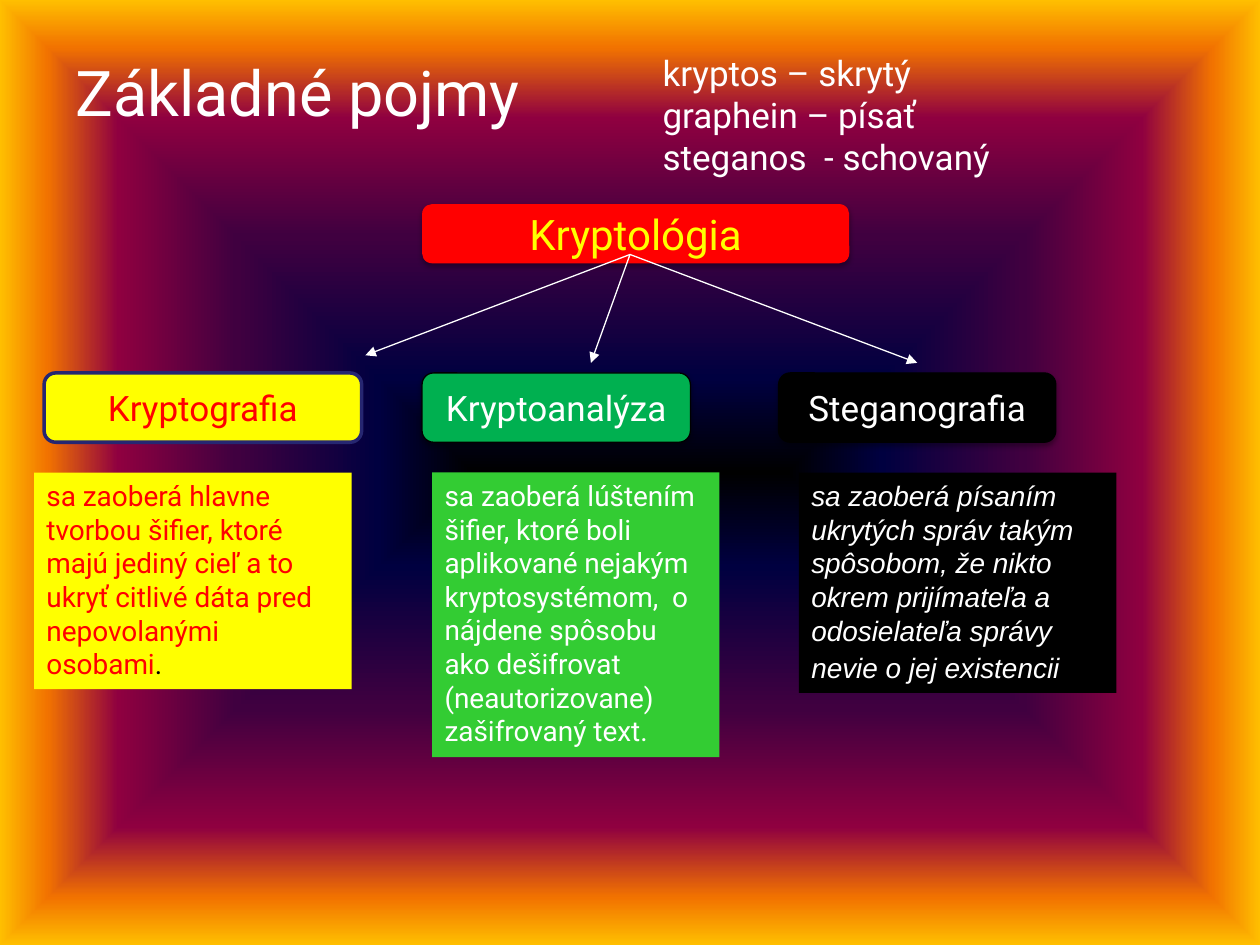
from dataclasses import dataclass

from pptx import Presentation
from pptx.dml.color import RGBColor
from pptx.enum.shapes import MSO_CONNECTOR, MSO_SHAPE
from pptx.enum.text import MSO_ANCHOR, MSO_AUTO_SIZE, PP_ALIGN
from pptx.oxml import parse_xml
from pptx.oxml.ns import nsdecls
from pptx.util import Inches, Pt


@dataclass(frozen=True)
class Theme:
    """Colours, fonts and type sizes of the deck."""
    white: str = "FFFFFF"
    black: str = "000000"
    red: str = "FF0000"
    yellow: str = "FFFF00"
    green: str = "00B050"
    lime: str = "33CC33"
    navy: str = "262671"
    glow: tuple = ((0, "000000"), (20, "000040"), (50, "400040"),
                   (75, "8F0040"), (90, "F27300"), (100, "FFBF00"))
    font: str = "Roboto"
    slant: str = "Arial"
    title: int = 36
    head: int = 24
    label: int = 20
    tail: int = 18
    note: int = 16


class Board:
    """Draws styled parts on one slide with a grid of 100 columns by 75 rows."""

    def __init__(self, deck, theme):
        """Add a title-only slide."""
        self.theme = theme
        self.wide, self.high = deck.slide_width, deck.slide_height
        self.slide = deck.slides.add_slide(deck.slide_layouts[5])

    def grid(self, *cells):
        """Turn column and row pairs into lengths."""
        units = (self.wide / 100, self.high / 75)
        return [round(cell * units[i % 2]) for i, cell in enumerate(cells)]

    def glow(self):
        """Fill the background from the centre outwards."""
        stops = "".join(f'<a:gs pos="{at * 1000}"><a:srgbClr val="{tint}"/></a:gs>'
                        for at, tint in self.theme.glow)
        self.slide.element.cSld.insert(0, parse_xml(
            f'<p:bg {nsdecls("p", "a")}><p:bgPr><a:gradFill rotWithShape="1">'
            f'<a:gsLst>{stops}</a:gsLst><a:path path="shape"><a:fillToRect '
            'l="50000" t="50000" r="50000" b="50000"/></a:path></a:gradFill>'
            '<a:effectLst/></p:bgPr></p:bg>'))

    def run(self, para, text, size, tint, font=None, slant=False):
        """Add one styled run."""
        run = para.add_run()
        run.text = text
        run.font.size = Pt(size)
        run.font.name = font or self.theme.font
        run.font.italic = slant
        run.font.color.rgb = RGBColor.from_string(tint)

    def title(self, place, text):
        """Move and fill the title placeholder."""
        shape = self.slide.shapes.title
        shape.left, shape.top, shape.width, shape.height = self.grid(*place)
        shape.text_frame.vertical_anchor = MSO_ANCHOR.MIDDLE
        para = shape.text_frame.paragraphs[0]
        para.alignment = PP_ALIGN.LEFT
        self.run(para, text, self.theme.title, self.theme.white)

    def lines(self, place, rows):
        """Add a text box with one paragraph for each row."""
        frame = self.slide.shapes.add_textbox(*self.grid(*place)).text_frame
        frame.word_wrap = True
        for i, row in enumerate(rows):
            para = frame.add_paragraph() if i else frame.paragraphs[0]
            self.run(para, row, self.theme.label, self.theme.white)

    def block(self, kind, place, fill):
        """Add a plain filled shape."""
        shape = self.slide.shapes.add_shape(kind, *self.grid(*place))
        shape.shadow.inherit = False
        shape.fill.solid()
        shape.fill.fore_color.rgb = RGBColor.from_string(fill)
        shape.line.fill.background()
        return shape

    def chip(self, place, text, fill, tint, size, edge=None, shade=True):
        """Add a rounded label with an optional edge and shadow."""
        shape = self.block(MSO_SHAPE.ROUNDED_RECTANGLE, place, fill)
        if edge:
            shape.line.color.rgb = RGBColor.from_string(edge[0])
            shape.line.width = Pt(edge[1])
        if shade:
            shape.element.spPr.find(".//{*}effectLst").append(parse_xml(
                f'<a:outerShdw {nsdecls("a")} blurRad="{Pt(3.1)}" dist="{Pt(1.8)}" '
                f'dir="5400000" rotWithShape="0"><a:srgbClr val="{self.theme.black}">'
                '<a:alpha val="35000"/></a:srgbClr></a:outerShdw>'))
        frame = shape.text_frame
        frame.word_wrap = False
        frame.vertical_anchor = MSO_ANCHOR.MIDDLE
        frame.paragraphs[0].alignment = PP_ALIGN.CENTER
        self.run(frame.paragraphs[0], text, size, tint)

    def note(self, place, fill, runs):
        """Add a filled box of running text."""
        frame = self.block(MSO_SHAPE.RECTANGLE, place, fill).text_frame
        frame.word_wrap = True
        frame.auto_size = MSO_AUTO_SIZE.SHAPE_TO_FIT_TEXT
        frame.vertical_anchor = MSO_ANCHOR.TOP
        frame.paragraphs[0].alignment = PP_ALIGN.LEFT
        for run in runs:
            self.run(frame.paragraphs[0], *run)

    def arrow(self, start, end):
        """Add a thin arrow."""
        line = self.slide.shapes.add_connector(
            MSO_CONNECTOR.STRAIGHT, *self.grid(*start, *end))
        line.line.color.rgb = RGBColor.from_string(self.theme.white)
        line.line.width = Pt(0.75)
        line.line._get_or_add_ln().append(
            parse_xml(f'<a:tailEnd {nsdecls("a")} type="triangle"/>'))
        line._element.spPr.append(parse_xml(f'<a:effectLst {nsdecls("a")}/>'))


def main():
    """Build and save the slide."""
    deck = Presentation()
    deck.slide_width, deck.slide_height = Inches(10), Inches(7.5)
    look = Theme()
    board = Board(deck, look)
    board.glow()
    board.title((5, 3, 90, 8.5), "Základné pojmy")
    board.lines((51.6, 3.6, 40.2, 11.1),
                ("kryptos – skrytý", "graphein – písať", "steganos  - schovaný"))
    board.chip((33.5, 16.2, 33.9, 4.7), "Kryptológia", look.red, look.yellow, look.head)

    edge = (look.black, 0.75)
    chips = (
        (3.5, 25.2, "Kryptografia", look.yellow, look.red, (look.navy, 2), False),
        (33.5, 21.3, "Kryptoanalýza", look.green, look.white, edge, True),
        (61.8, 22, "Steganografia", look.black, look.white, edge, True))
    for left, wide, text, fill, tint, rim, shade in chips:
        board.chip((left, 29.6, wide, 5.5), text, fill, tint, look.label, rim, shade)

    notes = (
        (2.7, 25.2, 17.2, look.yellow, (
            ("sa zaoberá hlavne tvorbou šifier, ktoré majú jediný cieľ a to ukryť "
             "citlivé dáta pred nepovolanými osobami", look.note, look.red),
            (".", look.note, look.black))),
        (34.3, 22.8, 22.6, look.lime, (
            ("sa zaoberá lúštením šifier, ktoré boli aplikované nejakým "
             "kryptosystémom,  o nájdene spôsobu ako dešifrovat "
             "(neautorizovane) zašifrovaný text.", look.note, look.white),)),
        (63.4, 25.2, 17.5, look.black, (
            ("sa zaoberá písaním ukrytých správ takým spôsobom, že nikto okrem "
             "prijímateľa a odosielateľa správy nevie o jej existencii",
             look.note, look.white, look.slant, True),
            (" ", look.tail, look.black, look.slant, True))))
    for left, wide, high, fill, runs in notes:
        board.note((left, 37.5, wide, high), fill, runs)

    for end in ((29, 28.2), (46.9, 28.8), (72.8, 28.8)):
        board.arrow((50, 20.2), end)
    deck.save("out.pptx")


if __name__ == "__main__":
    main()
